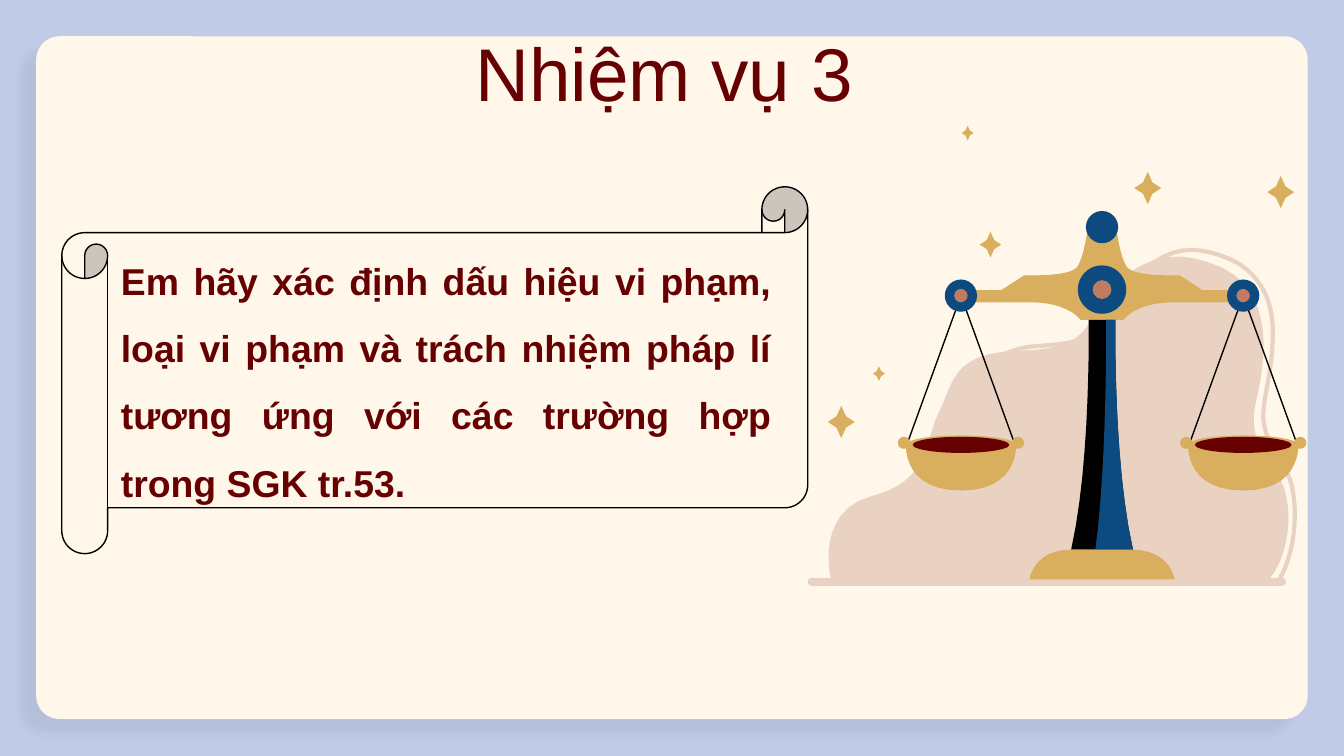
"""Build the task slide with a scroll of instructions and a pair of scales."""
from lxml import etree
from pptx import Presentation
from pptx.dml.color import RGBColor
from pptx.enum.shapes import MSO_CONNECTOR, MSO_SHAPE
from pptx.enum.text import MSO_ANCHOR, MSO_AUTO_SIZE, PP_ALIGN
from pptx.oxml.ns import qn
from pptx.util import Cm, Pt

OVAL = MSO_SHAPE.OVAL
ROUNDED = MSO_SHAPE.ROUNDED_RECTANGLE
SCROLL = MSO_SHAPE.HORIZONTAL_SCROLL
STAR = MSO_SHAPE.STAR_4_POINT
STRAIGHT = MSO_CONNECTOR.STRAIGHT

CREAM, LAVENDER, MAROON = "FFF7EA", "C2CBE6", "670001"
BLUSH, GOLD, NAVY, COPPER, BLACK = "EAD2C3", "D9AE5F", "0D4A80", "BF7C63", "000000"
CM_PER_INCH = 2.54
CURVE_STEPS = 12

TITLE = "Nhiệm vụ 3"
TASK = ("Em hãy xác định dấu hiệu vi phạm, loại vi phạm và trách nhiệm pháp lí "
        "tương ứng với các trường hợp trong SGK tr.53.")

HALO = [(6.44, 4.3), (6.4, 4, 6.5, 3.75, 6.73, 3.68), (7.2, 3.55, 7.05, 3.25, 7.22, 3.03),
        (7.28, 2.75, 7.4, 2.62, 7.66, 2.58), (7.9, 2.56, 8.1, 2.56, 8.24, 2.4),
        (8.34, 2.15, 8.58, 1.86, 8.86, 1.86), (8.99, 1.86, 9.13, 1.91, 9.23, 1.97),
        (9.45, 2.12, 9.48, 2.35, 9.47, 2.54), (9.46, 2.8, 9.4, 2.95, 9.4, 3.1),
        (9.4, 3.27, 9.53, 3.4, 9.6, 3.57), (9.67, 3.8, 9.63, 4.13, 9.52, 4.31)]
BLOB = [(8.76, 1.91), (8.52, 1.91, 8.34, 2.05, 8.19, 2.25), (8.08, 2.41, 8.1, 2.6, 7.58, 2.61),
        (7.06, 2.62, 7.09, 2.88, 6.98, 3.08), (6.88, 3.28, 6.92, 3.58, 6.49, 3.69),
        (6.06, 3.8, 6.18, 4.3, 6.18, 4.3), (9.45, 4.3), (9.55, 4.18, 9.62, 3.93, 9.57, 3.69),
        (9.52, 3.45, 9.27, 3.33, 9.34, 3.01), (9.42, 2.68, 9.49, 2.18, 9.09, 1.99),
        (8.97, 1.94, 8.86, 1.91, 8.76, 1.91)]
BEAM = [(8.09, 1.72), (8.09, 1.72, 8.07, 1.89, 8.02, 1.98), (7.98, 2.05, 7.75, 2.05, 7.62, 2.05),
        (7.45, 2.16), (7.18, 2.16), (7.18, 2.25), (7.67, 2.25),
        (7.95, 2.25, 8.04, 2.38, 8.04, 2.38), (8.36, 2.38), (8.36, 2.38, 8.45, 2.25, 8.73, 2.25),
        (9.22, 2.25), (9.22, 2.16), (8.95, 2.16), (8.78, 2.05),
        (8.65, 2.05, 8.42, 2.05, 8.38, 1.98), (8.33, 1.89, 8.31, 1.72, 8.31, 1.72)]
PILLAR = [(8.1, 2.38), (8.1, 2.38, 8.12, 3.43, 7.97, 4.09), (8.43, 4.09),
          (8.28, 3.43, 8.3, 2.38, 8.3, 2.38)]
PILLAR_FACE = [(8.23, 2.38), (8.23, 2.38, 8.24, 3.43, 8.15, 4.09), *PILLAR[2:]]
FOOT = [(7.97, 4.09), (7.69, 4.09, 7.66, 4.31, 7.66, 4.31), (8.74, 4.31),
        (8.74, 4.31, 8.71, 4.09, 8.42, 4.09)]
BOWL = [(0, 3.24), (-0.23, 3.24, -0.41, 3.27, -0.41, 3.31), (-0.41, 3.35, -0.41, 3.65, 0, 3.65),
        (0.41, 3.65, 0.41, 3.35, 0.41, 3.31), (0.41, 3.27, 0.23, 3.24, 0, 3.24)]
PAN_CENTERS = [7.15, 9.25]
HUB_DISCS = [(8.2, 1.69, 0.24, NAVY), (8.2, 2.155, 0.36, NAVY), (8.2, 2.155, 0.14, COPPER)]
PIVOT_Y = 2.2
STARS = [(6.54, 2.78, 0.09, 0.11), (7.37, 1.82, 0.16, 0.19), (9.53, 1.43, 0.2, 0.24),
         (6.26, 3.14, 0.2, 0.24), (8.54, 1.4, 0.2, 0.24), (7.2, 0.99, 0.09, 0.11)]


def inches(value):
    return Cm(value * CM_PER_INCH)


def color(code):
    return RGBColor.from_string(code)


def paint(shape, fill=None, line=None, width=0.75):
    shape.shadow.inherit = False
    if fill:
        shape.fill.solid()
        shape.fill.fore_color.rgb = color(fill)
    else:
        shape.fill.background()
    if line:
        shape.line.color.rgb = color(line)
        shape.line.width = Pt(width)
    else:
        shape.line.fill.background()


def add_preset(page, kind, at, fill, line=None, adjust=None):
    shape = page.shapes.add_shape(kind, *map(inches, at))
    if adjust is not None:
        shape.adjustments[0] = adjust
    paint(shape, fill, line)
    return shape


def add_centered(page, kind, x, y, width, height, fill, adjust=None):
    at = (x - width / 2, y - height / 2, width, height)
    return add_preset(page, kind, at, fill, adjust=adjust)


def trace(outline):
    points = [outline[0]]
    for step in outline[1:]:
        if len(step) == 2:
            points.append(step)
            continue
        start, first, second, end = points[-1], step[:2], step[2:4], step[4:]
        for index in range(1, CURVE_STEPS + 1):
            t = index / CURVE_STEPS
            weights = ((1 - t) ** 3, 3 * t * (1 - t) ** 2, 3 * t * t * (1 - t), t ** 3)
            knots = (start, first, second, end)
            points.append(tuple(sum(w * k[axis] for w, k in zip(weights, knots))
                                for axis in (0, 1)))
    return points


def add_outline(page, outline, fill=None, line=None, width=0.75, shift=0):
    points = [(inches(x + shift), inches(y)) for x, y in trace(outline)]
    builder = page.shapes.build_freeform(*points[0])
    builder.add_line_segments(points[1:], close=fill is not None)
    paint(builder.convert_to_shape(), fill, line, width)


def add_string(page, start, end):
    string = page.shapes.add_connector(STRAIGHT, *map(inches, (*start, *end)))
    string.line.color.rgb = color(BLACK)
    string.line.width = Pt(0.75)
    etree.SubElement(string._element.spPr, qn("a:effectLst"))


def add_card(page):
    card = add_preset(page, ROUNDED, (0.27, 0.27, 9.46, 5.08), CREAM, adjust=0.034)
    effects = card._element.spPr.find(qn("a:effectLst"))
    shadow = etree.SubElement(effects, qn("a:outerShdw"), blurRad=str(Pt(4.5)),
                              dist=str(Pt(10.5)), dir=str(137 * 60000),
                              algn="bl", rotWithShape="0")
    tint = etree.SubElement(shadow, qn("a:srgbClr"), val="515B7A")
    etree.SubElement(tint, qn("a:alpha"), val="10000")


def add_pan(page, center):
    for side in (-1, 1):
        add_string(page, (center, PIVOT_Y), (center + side * 0.41, 3.33))
    for diameter, fill in ((0.24, NAVY), (0.1, COPPER)):
        add_centered(page, OVAL, center, PIVOT_Y, diameter, diameter, fill)
    for side in (-1, 1):
        add_centered(page, OVAL, center + side * 0.425, 3.295, 0.09, 0.09, GOLD)
    add_outline(page, BOWL, GOLD, shift=center)
    add_centered(page, OVAL, center, 3.31, 0.72, 0.12, MAROON)


def add_scales(page):
    add_outline(page, HALO, line=BLUSH, width=2.25)
    add_outline(page, BLOB, BLUSH)
    add_preset(page, ROUNDED, (6.01, 4.3, 3.56, 0.06), BLUSH, adjust=0.5)
    for outline, fill in ((BEAM, GOLD), (PILLAR, BLACK), (PILLAR_FACE, NAVY), (FOOT, GOLD)):
        add_outline(page, outline, fill)
    for x, y, diameter, fill in HUB_DISCS:
        add_centered(page, OVAL, x, y, diameter, diameter, fill)
    for center in PAN_CENTERS:
        add_pan(page, center)
    for star in STARS:
        add_centered(page, STAR, *star, GOLD, adjust=0.25)


def write(box, text, size, align, bold=False, spacing=None):
    frame = box.text_frame
    frame.text = text
    frame.word_wrap = True
    frame.auto_size = MSO_AUTO_SIZE.SHAPE_TO_FIT_TEXT
    para = frame.paragraphs[0]
    para.alignment = align
    para.line_spacing = spacing
    font = para.runs[0].font
    font.name, font.size, font.bold = "Arial", Pt(size), bold
    font.color.rgb = color(MAROON)


def main():
    deck = Presentation()
    deck.slide_width, deck.slide_height = inches(10), inches(5.625)
    page = deck.slides.add_slide(deck.slide_layouts[6])
    page.background.fill.solid()
    page.background.fill.fore_color.rgb = color(LAVENDER)
    add_card(page)
    add_scales(page)
    title = page.shapes.add_textbox(*map(inches, (3.1, 0.15, 3.68, 0.77)))
    write(title, TITLE, 40, PP_ALIGN.CENTER)
    scroll = add_preset(page, SCROLL, (0.46, 1.39, 5.55, 2.73), CREAM, BLACK, 0.125)
    scroll.text_frame.vertical_anchor = MSO_ANCHOR.MIDDLE
    write(scroll, TASK, 20, PP_ALIGN.JUSTIFY, bold=True, spacing=1.5)
    deck.save("out.pptx")


if __name__ == "__main__":
    main()
